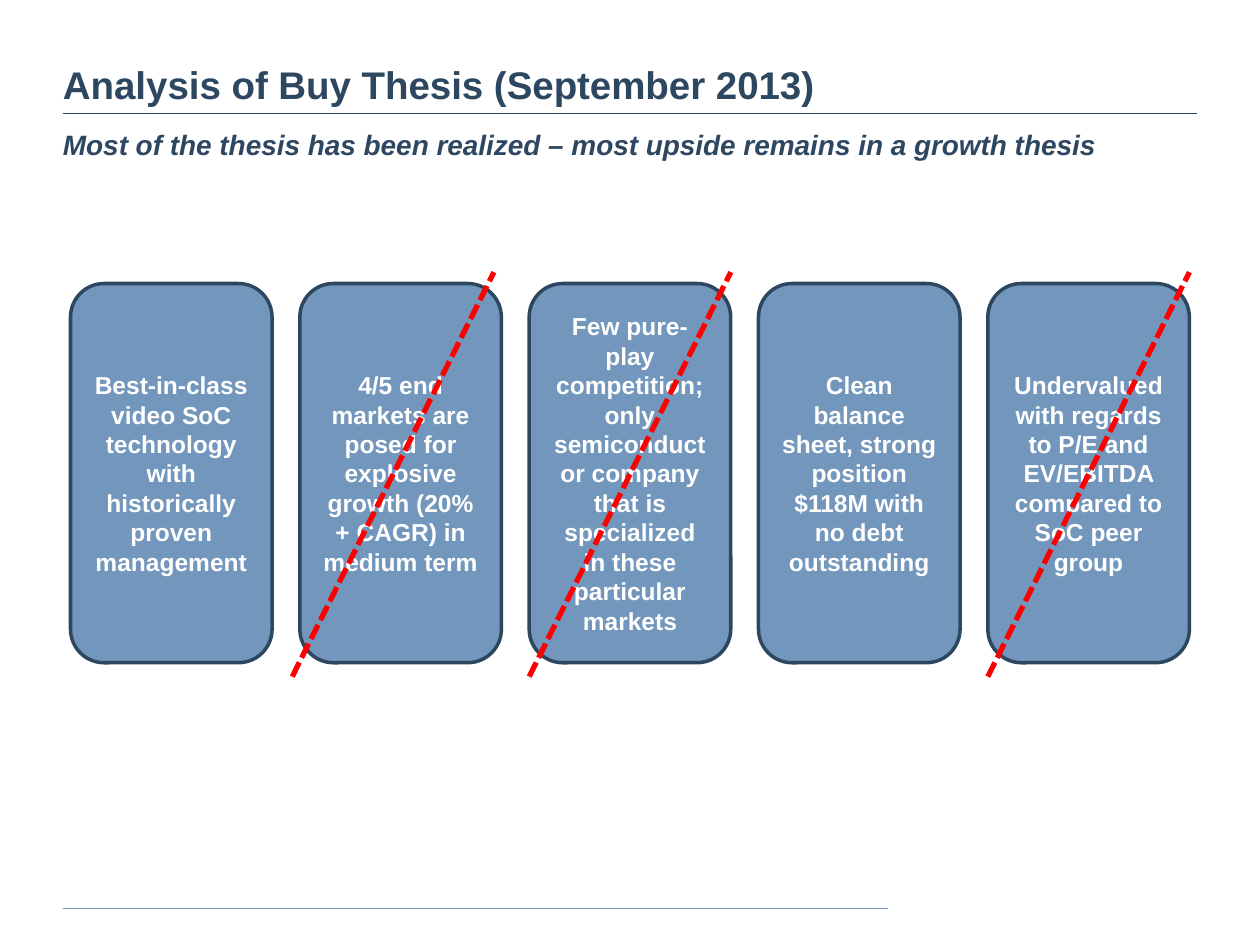
import pptx
import pptx.util
import pptx.dml.color
import pptx.enum.dml
import pptx.enum.shapes
import pptx.enum.text
import pptx.oxml.ns
from lxml import etree

Inches, Pt = pptx.util.Inches, pptx.util.Pt
RGBColor = pptx.dml.color.RGBColor

NAVY = RGBColor(0x2E, 0x47, 0x60)
BLUE = RGBColor(0x73, 0x97, 0xBC)
WHITE = RGBColor(0xFF, 0xFF, 0xFF)
RED = RGBColor(0xFF, 0x00, 0x00)

CARD_LEFT, CARD_TOP, CARD_WIDTH, CARD_HEIGHT = 0.56, 2.25, 1.6, 3.01
CARD_PITCH = 1.82
STRIKE_BOTTOM, STRIKE_TOP = 5.37, 2.16

# Thesis point, and the strike's horizontal offset from its card (None: not struck)
THESIS = [
    ("Best-in-class video SoC technology with historically proven management", None),
    ("4/5 end markets are posed for explosive growth (20%+ CAGR) in medium term", -0.06),
    ("Few pure-play competition; only semiconductor company that is "
     "specialized in these particular markets", 0),
    ("Clean balance sheet, strong position $118M with no debt outstanding", None),
    ("Undervalued with regards to P/E and EV/EBITDA compared to SoC peer group", 0),
]


def set_text(tf, text, size, color, italic=False):
    tf.word_wrap = True
    tf.vertical_anchor = pptx.enum.text.MSO_ANCHOR.MIDDLE
    p = tf.paragraphs[0]
    p.text = text
    p.font.name = "Arial"
    p.font.size = Pt(size)
    p.font.bold = True
    p.font.italic = italic
    p.font.color.rgb = color
    return p


def add_heading(slide, text, top, height, size, italic=False):
    s = slide.shapes.add_textbox(Inches(0.5), Inches(top), Inches(9), Inches(height))
    s.text_frame.margin_left = 0
    set_text(s.text_frame, text, size, NAVY, italic)


def add_line(slide, x1, y1, x2, y2, color, width):
    s = slide.shapes.add_connector(
        pptx.enum.shapes.MSO_CONNECTOR.STRAIGHT,
        Inches(x1), Inches(y1), Inches(x2), Inches(y2))
    s.line.color.rgb = color
    s.line.width = Pt(width)
    etree.SubElement(s._element.spPr, pptx.oxml.ns.qn("a:effectLst"))
    return s


def add_card(slide, left, text):
    s = slide.shapes.add_shape(
        pptx.enum.shapes.MSO_SHAPE.ROUNDED_RECTANGLE,
        Inches(left), Inches(CARD_TOP), Inches(CARD_WIDTH), Inches(CARD_HEIGHT))
    s.shadow.inherit = False
    s.fill.solid()
    s.fill.fore_color.rgb = BLUE
    s.line.color.rgb = NAVY
    s.line.width = Pt(2)
    p = set_text(s.text_frame, text, 14, WHITE)
    p.alignment = pptx.enum.text.PP_ALIGN.CENTER


def add_strike(slide, left):
    s = add_line(slide, left, STRIKE_BOTTOM, left + CARD_WIDTH, STRIKE_TOP, RED, 3)
    s.line.dash_style = pptx.enum.dml.MSO_LINE.SQUARE_DOT


def main():
    prs = pptx.Presentation()
    prs.slide_width, prs.slide_height = Inches(10), Inches(7.5)
    slide = prs.slides.add_slide(prs.slide_layouts[6])

    # Header and footer rules
    add_line(slide, 0.5, 0.9, 9.5, 0.9, NAVY, 1)
    add_line(slide, 0.5, 7.21, 7.05, 7.21, BLUE, 1)

    # Title and subtitle
    add_heading(slide, "Analysis of Buy Thesis (September 2013)", 0.44, 0.46, 22)
    add_heading(slide, "Most of the thesis has been realized – most upside "
                "remains in a growth thesis", 0.95, 0.39, 16, italic=True)

    # Thesis cards, with the realized ones struck through
    for i, (text, strike_offset) in enumerate(THESIS):
        left = CARD_LEFT + i * CARD_PITCH
        add_card(slide, left, text)
        if strike_offset is not None:
            add_strike(slide, left + strike_offset)

    prs.save("out.pptx")


if __name__ == "__main__":
    main()
